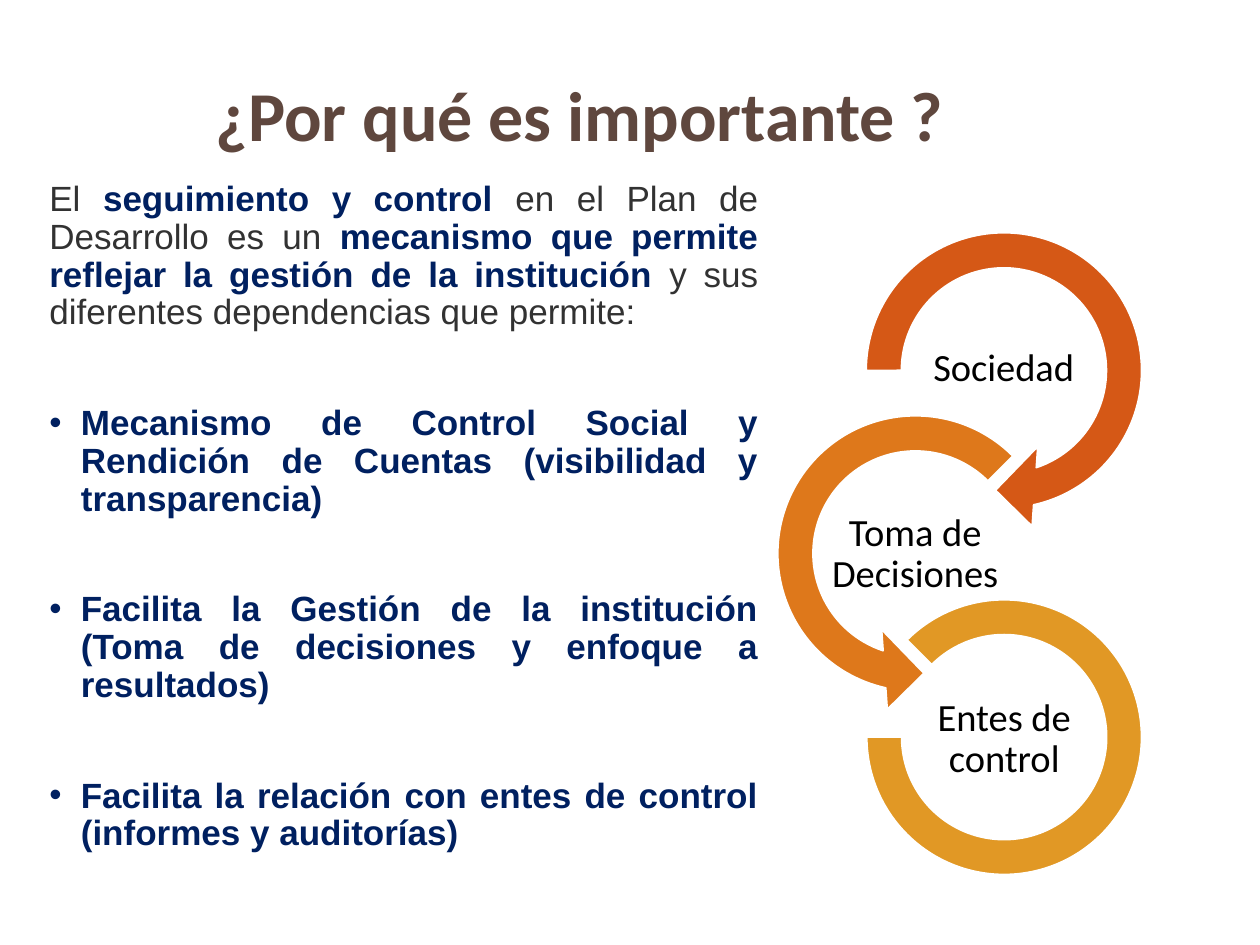
import pptx
import pptx.dml.color
import pptx.enum.shapes
import pptx.enum.text
import pptx.util
from dataclasses import dataclass
from lxml import etree

Pt = pptx.util.Pt
Shape = pptx.enum.shapes.MSO_SHAPE
Align = pptx.enum.text.PP_ALIGN
Anchor = pptx.enum.text.MSO_ANCHOR


@dataclass(frozen=True)
class Theme:
    heading: str = "5F473E"
    text: str = "323232"
    emphasis: str = "002060"
    label: str = "000000"
    outline: str = "FFFFFF"
    society: str = "D55816"
    decisions: str = "DE781B"
    oversight: str = "E19825"
    heading_font: str = "Calibri"
    body_font: str = "Arial"
    heading_size: float = 40
    body_size: float = 20
    label_size: float = 22
    line_spacing: float = 0.9


class SlideBuilder:
    def __init__(self, slide, theme):
        self.slide = slide
        self.theme = theme

    def place(self, shape, left, top, width, height):
        shape.left, shape.top = Pt(left), Pt(top)
        shape.width, shape.height = Pt(width), Pt(height)

    def color(self, value):
        return pptx.dml.color.RGBColor.from_string(value)

    def run(self, paragraph, text, font, size, color, bold=False):
        run = paragraph.add_run()
        run.text = text
        run.font.name = font
        run.font.size = Pt(size)
        run.font.bold = bold
        run.font.color.rgb = self.color(color)

    def title(self, text, box):
        heading = self.slide.shapes.title
        self.place(heading, *box)
        frame = heading.text_frame
        frame.auto_size = pptx.enum.text.MSO_AUTO_SIZE.NONE
        frame.vertical_anchor = Anchor.MIDDLE
        paragraph = frame.paragraphs[0]
        paragraph.alignment = Align.CENTER
        paragraph.line_spacing = self.theme.line_spacing
        self.run(paragraph, text, self.theme.heading_font,
                 self.theme.heading_size, self.theme.heading, True)

    def bullet(self, paragraph, char, indent):
        """Set the bullet and hanging indent; no char means a plain paragraph."""
        props = paragraph._p.get_or_add_pPr()
        props.set("marL", str(Pt(indent)))
        props.set("indent", str(-Pt(indent)))
        namespace = props.nsmap["a"]
        if char:
            etree.SubElement(props, f"{{{namespace}}}buFont", typeface="Arial")
            etree.SubElement(props, f"{{{namespace}}}buChar", char=char)
        else:
            etree.SubElement(props, f"{{{namespace}}}buNone")

    def body(self, intro, benefits, box, gap):
        """Fill the body with an intro of (text, emphasised) parts and a list."""
        content = self.slide.placeholders[1]
        self.place(content, *box)
        frame = content.text_frame
        frame.auto_size = pptx.enum.text.MSO_AUTO_SIZE.NONE
        for index, parts in enumerate([intro] + [[(b, True)] for b in benefits]):
            paragraph = frame.add_paragraph() if index else frame.paragraphs[0]
            self.bullet(paragraph, "•" if index else None, 18 if index else 0)
            paragraph.alignment = Align.JUSTIFY
            paragraph.line_spacing = self.theme.line_spacing
            paragraph.space_before = Pt(gap if index else 0)
            for text, emphasised in parts:
                color = self.theme.emphasis if emphasised else self.theme.text
                self.run(paragraph, text, self.theme.body_font,
                         self.theme.body_size, color, emphasised)

    def ring(self, kind, box, color, adjustments):
        ring = self.slide.shapes.add_shape(kind, *map(Pt, box))
        ring.shadow.inherit = False
        ring.fill.solid()
        ring.fill.fore_color.rgb = self.color(color)
        ring.line.color.rgb = self.color(self.theme.outline)
        ring.line.width = Pt(1)
        for index, value in enumerate(adjustments):
            ring.adjustments[index] = value

    def label(self, text, box):
        frame = self.slide.shapes.add_textbox(*map(Pt, box)).text_frame
        frame.word_wrap = True
        frame.vertical_anchor = Anchor.MIDDLE
        frame.margin_left = frame.margin_right = Pt(1.4)
        frame.margin_top = frame.margin_bottom = Pt(1.4)
        paragraph = frame.paragraphs[0]
        paragraph.alignment = Align.CENTER
        paragraph.line_spacing = self.theme.line_spacing
        self.run(paragraph, text, self.theme.heading_font,
                 self.theme.label_size, self.theme.label)


def main():
    presentation = pptx.Presentation()
    presentation.slide_width, presentation.slide_height = Pt(720), Pt(540)
    slide = presentation.slides.add_slide(presentation.slide_layouts[1])
    theme = Theme()
    builder = SlideBuilder(slide, theme)

    builder.title("¿Por qué es importante ?", (21, 36, 620.5, 63.5))
    intro = [
        ("El ", False),
        ("seguimiento y control ", True),
        ("en el Plan de Desarrollo es un ", False),
        ("mecanismo que permite reflejar la gestión de la institución ", True),
        ("y sus diferentes dependencias que permite: ", False),
    ]
    benefits = [
        "Mecanismo de Control Social y Rendición de Cuentas "
        "(visibilidad y transparencia)",
        "Facilita la Gestión de la institución "
        "(Toma de decisiones y enfoque a resultados)",
        "Facilita la relación con entes de control (informes y auditorías)",
    ]
    builder.body(intro, benefits, (21, 100, 419.5, 412), gap=41.6)

    arrow, arc = 183, 157
    rings = [
        ("Sociedad", Shape.CIRCULAR_ARROW, (482.2, 120.2, arrow, arrow),
         theme.society, (0.11, 11.42, 45, 108, 0.125), 522.8),
        ("Toma de Decisiones", Shape.LEFT_CIRCULAR_ARROW,
         (431.7, 224.8, arrow, arrow),
         theme.decisions, (0.11, 11.42, 63, 189, 0.125), 472.2),
        ("Entes de control", Shape.BLOCK_ARC, (495.3, 342.7, arc, arc),
         theme.oversight, (135, 108, 0.127), 523.1),
    ]
    for row, (text, kind, box, color, adjustments, left) in enumerate(rings):
        builder.ring(kind, box, color, adjustments)
        builder.label(text, (left, 185.9 + 105.7 * row, 101.5, 50.5))

    presentation.save("out.pptx")


if __name__ == "__main__":
    main()
